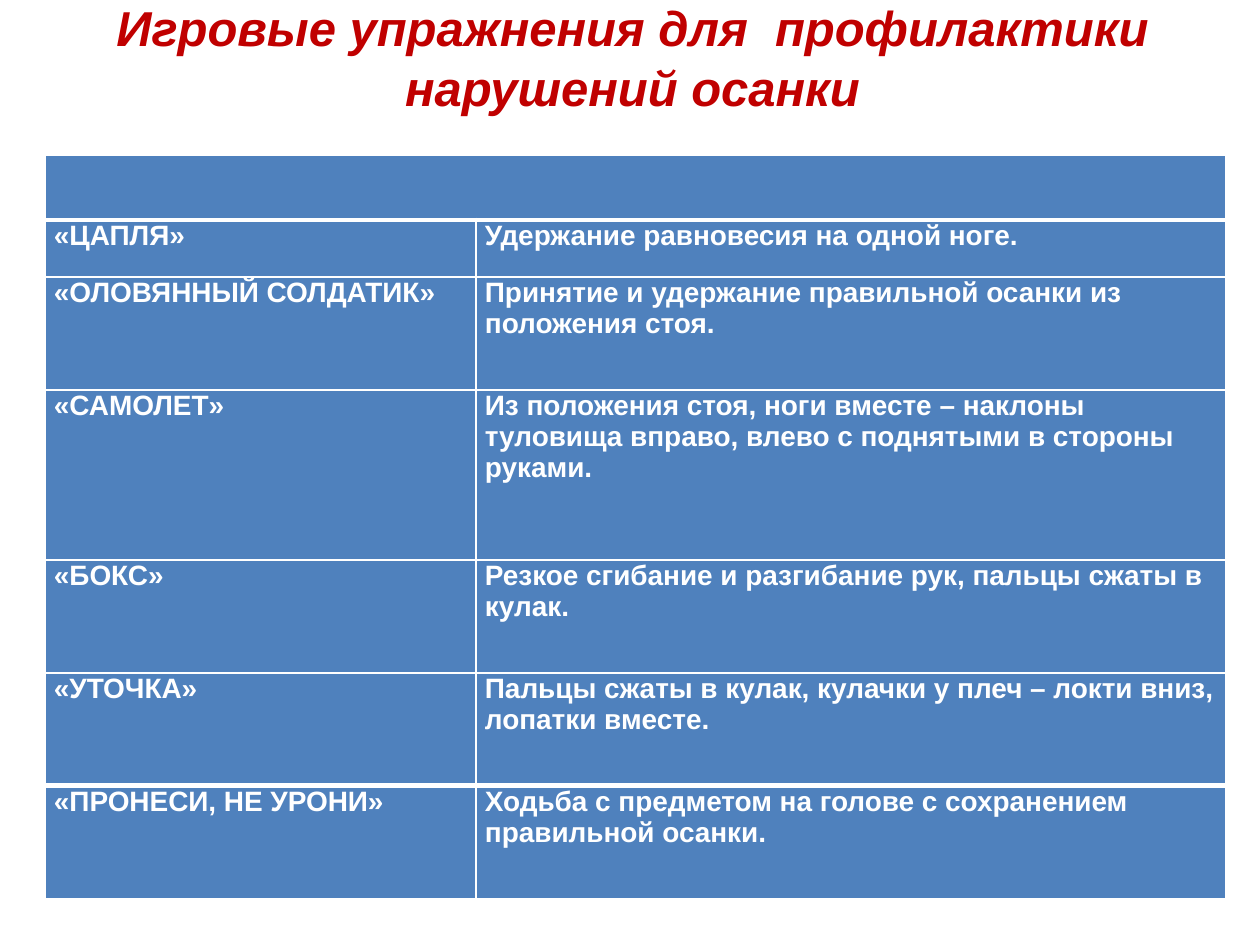
from lxml.etree import SubElement
from pptx import Presentation
from pptx.dml.color import RGBColor
from pptx.enum.text import MSO_ANCHOR, PP_ALIGN
from pptx.oxml.ns import qn
from pptx.util import Pt

SCALE = 914400 / 126  # EMU in one px
RED = RGBColor(0xC0, 0x00, 0x00)
BLUE = RGBColor(0x4F, 0x81, 0xBD)
WHITE = RGBColor(0xFF, 0xFF, 0xFF)

TITLE = ["Игровые упражнения для  профилактики", "нарушений осанки"]
GAMES = [
    ("«ЦАПЛЯ»", "Удержание равновесия на одной ноге."),
    ("«ОЛОВЯННЫЙ СОЛДАТИК»",
     "Принятие и удержание правильной осанки из положения стоя."),
    ("«САМОЛЕТ»", "Из положения стоя, ноги вместе – наклоны туловища "
     "вправо, влево с поднятыми в стороны руками."),
    ("«БОКС»", "Резкое сгибание и разгибание рук, пальцы сжаты в кулак."),
    ("«УТОЧКА»",
     "Пальцы сжаты в кулак, кулачки у плеч – локти вниз, лопатки вместе."),
    ("«ПРОНЕСИ, НЕ УРОНИ»",
     "Ходьба с предметом на голове с сохранением правильной осанки."),
]
COLS = [431, 750]
ROWS = [65, 57, 113, 170, 113, 113, 113]


def px(num):
    return round(num * SCALE)


class Deck:
    face = "Arial"

    def __init__(self, wide, high):
        self.prs = Presentation()
        self.prs.slide_width, self.prs.slide_height = px(wide), px(high)
        self.slide = self.prs.slides.add_slide(self.prs.slide_layouts[6])

    def style(self, para, size, color, italic=False):
        for run in para.runs:
            font = run.font
            font.name, font.size, font.bold = self.face, Pt(size), True
            font.italic = italic
            font.color.rgb = color

    def title(self, lines, left, top, wide, high):
        box = self.slide.shapes.add_textbox(*map(px, (left, top, wide, high)))
        frame = box.text_frame
        frame.word_wrap = True
        frame.vertical_anchor = MSO_ANCHOR.TOP
        frame.text = "\n".join(lines)
        for para in frame.paragraphs:
            para.alignment = PP_ALIGN.CENTER
            para.line_spacing = Pt(34)
            self.style(para, 28, RED, italic=True)

    def edge(self, cell, side, width):
        props = cell._tc.get_or_add_tcPr()
        line = SubElement(props, qn("a:ln" + side), w=str(Pt(width)))
        fill = SubElement(line, qn("a:solidFill"))
        SubElement(fill, qn("a:srgbClr"), val=str(WHITE))

    def cell(self, cell, text, top, base):
        for side, width in zip("LRTB", (1, 1, top, base)):
            self.edge(cell, side, width)
        cell.fill.solid()
        cell.fill.fore_color.rgb = BLUE
        if text:
            cell.margin_left = cell.margin_right = px(9)
            cell.margin_top = cell.margin_bottom = 0
            cell.text_frame.text = text
            self.style(cell.text_frame.paragraphs[0], 16, WHITE)

    def table(self, data, left, top, cols, rows):
        area = map(px, (left, top, sum(cols), sum(rows)))
        table = self.slide.shapes.add_table(len(rows), len(cols), *area).table
        for col, wide in zip(table.columns, cols):
            col.width = px(wide)
        for row, high in zip(table.rows, rows):
            row.height = px(high)
        # Thick rules lie under the header and above the last row
        thick = {1, len(rows) - 1}
        for i, texts in enumerate(data):
            for j, text in enumerate(texts):
                top, base = (3 if k in thick else 1 for k in (i, i + 1))
                self.cell(table.cell(i, j), text, top, base)
        table.cell(0, 0).merge(table.cell(0, len(cols) - 1))


def main():
    deck = Deck(1260, 945)
    # Table of games under an empty header
    deck.table([("", "")] + GAMES, 45, 155, COLS, ROWS)
    # Heading
    deck.title(TITLE, 90, -9, 1085, 170)
    deck.prs.save("out.pptx")


if __name__ == "__main__":
    main()
